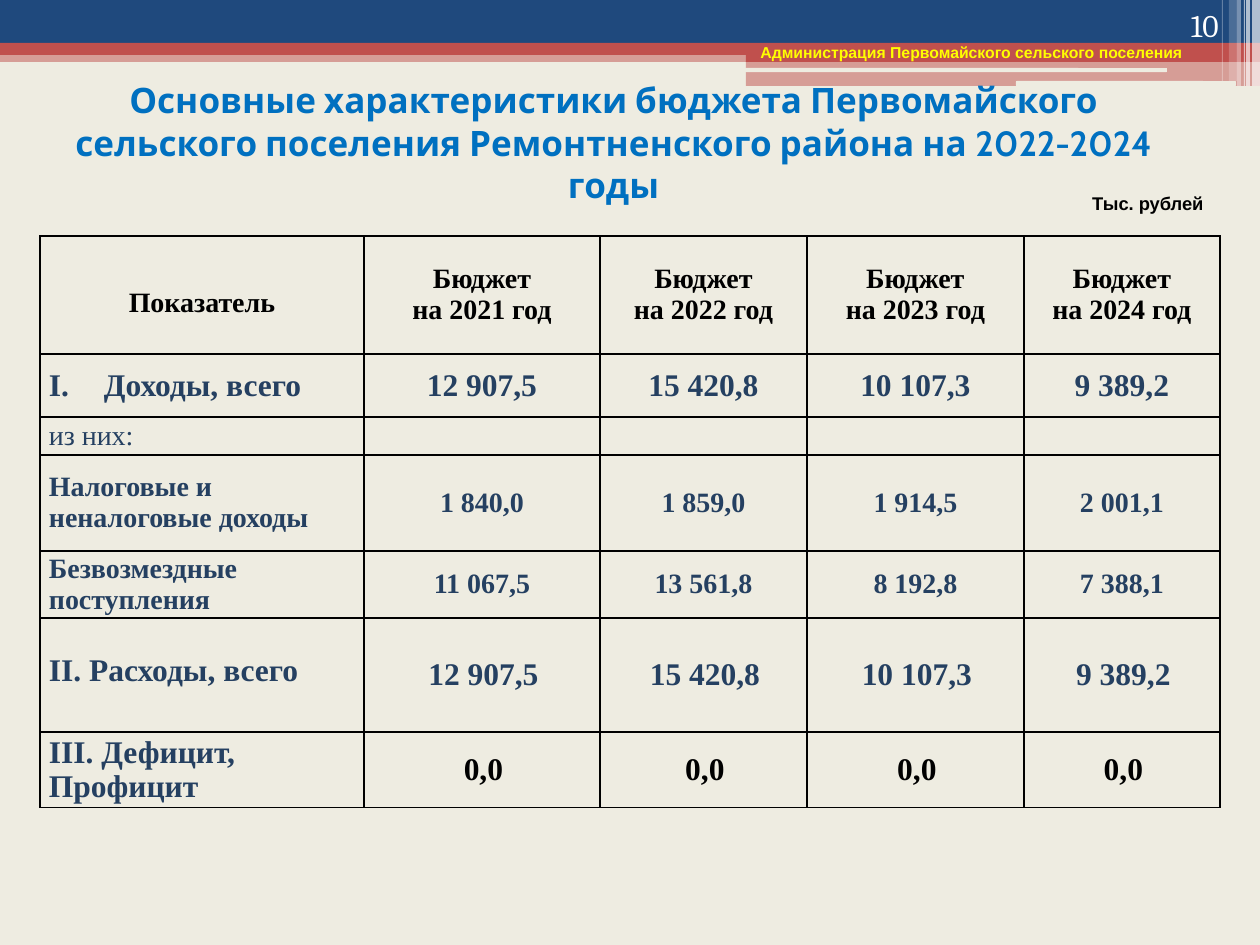
"""Build the budget summary slide of the rural settlement."""
from dataclasses import dataclass

from lxml.etree import SubElement
from pptx import Presentation
from pptx.dml.color import RGBColor
from pptx.enum.shapes import MSO_SHAPE
from pptx.enum.text import MSO_ANCHOR, PP_ALIGN
from pptx.oxml import parse_xml
from pptx.oxml.ns import nsdecls, qn
from pptx.slide import Slide
from pptx.table import _Cell
from pptx.text.text import TextFrame
from pptx.util import Emu, Pt

EMU_PER_PX = 914400 / 126

CREAM = RGBColor(0xEE, 0xEC, 0xE1)
NAVY = RGBColor(0x1F, 0x49, 0x7D)
RED = RGBColor(0xC0, 0x50, 0x4D)
WHITE = RGBColor(0xFF, 0xFF, 0xFF)
BLACK = RGBColor(0x00, 0x00, 0x00)
YELLOW = RGBColor(0xFF, 0xFF, 0x00)
SKY = RGBColor(0x00, 0x70, 0xC0)
INK = RGBColor(0x25, 0x40, 0x61)


@dataclass(frozen=True)
class Bar:
    left: int
    top: int
    width: int
    height: int
    color: RGBColor
    opacity: int = 100
    rounded: bool = False


@dataclass(frozen=True)
class BudgetRow:
    height: int
    label: str
    amounts: tuple[str, ...]
    size: int = 16
    bold: bool = True
    amount_color: RGBColor = INK
    amount_indent: int = -9
    numbered: bool = False
    label_lift: int = 0


BARS = (
    Bar(0, 50, 1260, 12, RED, 50),
    Bar(0, 0, 1260, 43, NAVY),
    Bar(0, 43, 1260, 12, RED),
    Bar(746, 49, 514, 13, RED),
    Bar(746, 61, 514, 25, RED, 50),
    Bar(745, 68, 422, 4, CREAM, rounded=True),
    Bar(1016, 81, 220, 5, CREAM, rounded=True),
    Bar(1252, 0, 8, 86, WHITE, 65),
    Bar(1246, 0, 4, 86, WHITE, 65),
    Bar(1244, 0, 1, 86, WHITE, 60),
    Bar(1237, 0, 4, 86, WHITE, 40),
    Bar(1229, 0, 8, 81, WHITE, 20),
    Bar(1222, 0, 1, 81, WHITE, 30),
)

COLUMN_WIDTHS = (324, 236, 207, 217, 196)
HEADER_HEIGHT = 118
YEARS = (2021, 2022, 2023, 2024)
TOTALS = ("12 907,5", "15 420,8", "10 107,3", "9 389,2")
BUDGET = (
    BudgetRow(63, "Доходы, всего", TOTALS, 18, numbered=True),
    BudgetRow(37, "из них:", ("",) * 4, bold=False),
    BudgetRow(96, "Налоговые и неналоговые доходы",
              ("1 840,0", "1 859,0", "1 914,5", "2 001,1")),
    BudgetRow(67, "Безвозмездные поступления",
              ("11 067,5", "13 561,8", "8 192,8", "7 388,1")),
    BudgetRow(114, "II. Расходы, всего", TOTALS, 18, amount_indent=3, label_lift=8),
    BudgetRow(75, "III. Дефицит, Профицит", ("0,0",) * 4, 18,
              amount_color=BLACK, amount_indent=3),
)


def px(length: int) -> Emu:
    """Turn pixels into EMU."""
    return Emu(round(length * EMU_PER_PX))


def write(frame: TextFrame, text: str, *, size: float, color: RGBColor,
          font: str = "Times New Roman", bold: bool = True,
          align: PP_ALIGN = PP_ALIGN.LEFT, indent: int = 0, hanging: int = 0,
          line_spacing: float = 1.0, numbered: bool = False) -> None:
    """Write each line of the text as one formatted paragraph."""
    frame.word_wrap = True
    for index, line in enumerate(text.split("\n")):
        paragraph = frame.add_paragraph() if index else frame.paragraphs[0]
        paragraph.alignment = align
        paragraph.line_spacing = line_spacing
        properties = paragraph._p.get_or_add_pPr()
        properties.set("marL", str(px(hanging)))
        properties.set("indent", str(px(indent - hanging)))
        if numbered:
            SubElement(properties, qn("a:buAutoNum"), type="romanUcPeriod")
        if line:
            run = paragraph.add_run()
            run.text = line
            run.font.name, run.font.size = font, Pt(size)
            run.font.bold, run.font.color.rgb = bold, color


def draw_bar(slide: Slide, bar: Bar) -> None:
    """Draw one strip of the header band."""
    preset = MSO_SHAPE.ROUNDED_RECTANGLE if bar.rounded else MSO_SHAPE.RECTANGLE
    strip = slide.shapes.add_shape(
        preset, px(bar.left), px(bar.top), px(bar.width), px(bar.height))
    strip.shadow.inherit = False
    strip.line.fill.background()
    strip.fill.solid()
    strip.fill.fore_color.rgb = bar.color
    if bar.opacity < 100:
        tint = strip._element.spPr.find(qn("a:solidFill"))[0]
        SubElement(tint, qn("a:alpha"), val=str(bar.opacity * 1000))


def add_label(slide: Slide, left: int, top: int, width: int, height: int,
              text: str, anchor: MSO_ANCHOR = MSO_ANCHOR.TOP, **style) -> None:
    """Place a free-standing text on the slide."""
    frame = slide.shapes.add_textbox(
        px(left), px(top), px(width), px(height)).text_frame
    frame.vertical_anchor = anchor
    write(frame, text, **style)


def fill_cell(cell: _Cell, text: str, lift: int = 0, **style) -> None:
    """Give a cell its borders, margins and text."""
    cell.fill.background()
    cell.vertical_anchor = MSO_ANCHOR.MIDDLE
    cell.margin_left = cell.margin_right = px(9)
    cell.margin_top, cell.margin_bottom = 0, px(lift)
    properties = cell._tc.get_or_add_tcPr()
    for position, side in enumerate(("lnL", "lnR", "lnT", "lnB")):
        properties.insert(position, parse_xml(
            f'<a:{side} {nsdecls("a")} w="{Pt(1)}"><a:solidFill>'
            f'<a:srgbClr val="{BLACK}"/></a:solidFill></a:{side}>'))
    write(cell.text_frame, text, **style)


def draw_budget(slide: Slide, left: int, top: int) -> None:
    """Draw the table of budget figures by year."""
    heights = (HEADER_HEIGHT, *(row.height for row in BUDGET))
    table = slide.shapes.add_table(
        len(heights), len(COLUMN_WIDTHS), px(left), px(top),
        px(sum(COLUMN_WIDTHS)), px(sum(heights))).table
    table.first_row = table.horz_banding = False
    for column, width in zip(table.columns, COLUMN_WIDTHS):
        column.width = px(width)
    for line, height in zip(table.rows, heights):
        line.height = px(height)

    heading = dict(size=16, color=BLACK, align=PP_ALIGN.CENTER)
    fill_cell(table.cell(0, 0), "Показатель", indent=-9, line_spacing=1.5, **heading)
    for column, year in enumerate(YEARS, 1):
        fill_cell(table.cell(0, column), f"Бюджет\nна {year} год", **heading)

    for index, row in enumerate(BUDGET, 1):
        fill_cell(table.cell(index, 0), row.label, row.label_lift, size=row.size,
                  color=INK, bold=row.bold, numbered=row.numbered,
                  hanging=55 if row.numbered else 0)
        for column, amount in enumerate(row.amounts, 1):
            fill_cell(table.cell(index, column), amount, size=row.size,
                      color=row.amount_color, align=PP_ALIGN.CENTER,
                      indent=row.amount_indent)


def main() -> None:
    """Build and save the slide."""
    deck = Presentation()
    deck.slide_width, deck.slide_height = px(1260), px(945)
    slide = deck.slides.add_slide(deck.slide_layouts[6])
    slide.background.fill.solid()
    slide.background.fill.fore_color.rgb = CREAM
    for bar in BARS:
        draw_bar(slide, bar)
    add_label(slide, 29, 96, 1169, 92,
              "Основные характеристики бюджета Первомайского сельского поселения "
              "Ремонтненского района на 2022-2024 годы", MSO_ANCHOR.MIDDLE,
              size=20, color=SKY, font="Cabin", align=PP_ALIGN.CENTER)
    add_label(slide, 748, 37, 457, 32, "Администрация Первомайского сельского поселения",
              size=9, color=YELLOW, font="Arial")
    draw_budget(slide, 40, 236)
    add_label(slide, 1037, 186, 179, 35, "Тыс. рублей",
              size=10.5, color=BLACK, font="Arial", align=PP_ALIGN.RIGHT)
    add_label(slide, 1126, 0, 105, 50, "10", MSO_ANCHOR.BOTTOM,
              size=18, color=WHITE, font="Cambria", bold=False, align=PP_ALIGN.RIGHT)
    deck.save("out.pptx")


if __name__ == "__main__":
    main()
